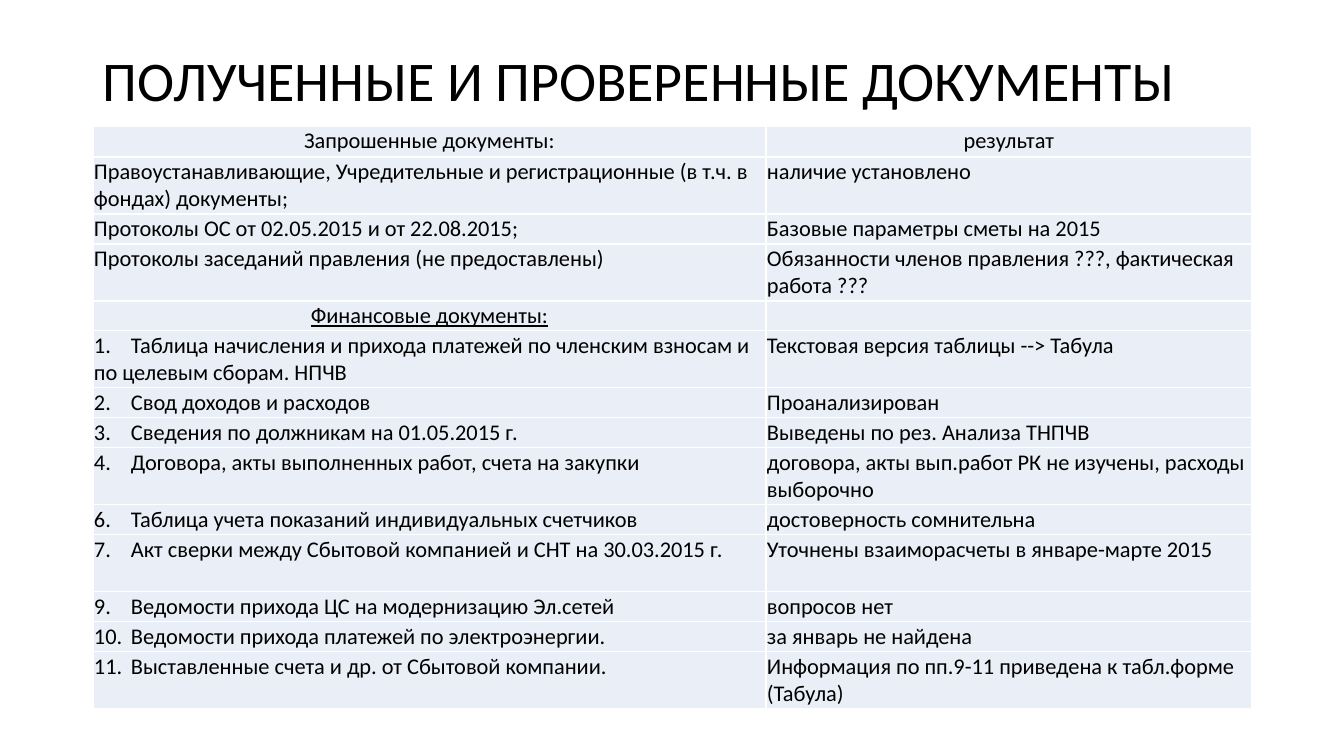
from lxml.etree import SubElement
from pptx import Presentation
from pptx.dml.color import RGBColor
from pptx.enum.text import MSO_ANCHOR, PP_ALIGN
from pptx.oxml.ns import qn
from pptx.util import Pt

TITLE = "ПОЛУЧЕННЫЕ И ПРОВЕРЕННЫЕ ДОКУМЕНТЫ"
# Height kind, document, result; a tab follows each item number
ROWS = [
    ("header", "Запрошенные документы:", "результат"),
    ("double", "Правоустанавливающие, Учредительные и регистрационные (в т.ч. в фондах) документы;",
     "наличие установлено"),
    ("single", "Протоколы ОС от 02.05.2015 и от 22.08.2015;", "Базовые параметры сметы на 2015"),
    ("double", "Протоколы заседаний правления (не предоставлены)",
     "Обязанности членов правления ???, фактическая работа ???"),
    ("single", "Финансовые документы:", ""),
    ("double", "1.\tТаблица начисления и прихода платежей по членским взносам и по целевым сборам. НПЧВ",
     "Текстовая версия таблицы --> Табула"),
    ("single", "2.\tСвод доходов и расходов", "Проанализирован"),
    ("single", "3.\tСведения по должникам на 01.05.2015 г.", "Выведены по рез. Анализа ТНПЧВ"),
    ("double", "4.\tДоговора, акты выполненных работ, счета на закупки",
     "договора, акты вып.работ РК не изучены, расходы выборочно"),
    ("single", "6.\tТаблица учета показаний индивидуальных счетчиков", "достоверность сомнительна"),
    ("double", "7.\tАкт сверки между Cбытовой компанией и СНТ на 30.03.2015 г.",
     "Уточнены взаиморасчеты в январе-марте 2015"),
    ("single", "9.\tВедомости прихода ЦС на модернизацию Эл.сетей", "вопросов нет"),
    ("single", "10.\tВедомости прихода платежей по электроэнергии.", "за январь не найдена"),
    ("double", "11.\tВыставленные счета и др. от Cбытовой компании.",
     "Информация по пп.9-11 приведена к табл.форме (Табула)"),
]
HEADER_ROW, SECTION_ROW = 0, 4

FONT = "Calibri"
BLACK = RGBColor(0x00, 0x00, 0x00)
WHITE = RGBColor(0xFF, 0xFF, 0xFF)
PALE_BLUE = RGBColor(0xEA, 0xEF, 0xF7)

# Lengths in px
SLIDE_WIDTH, SLIDE_HEIGHT = 1344, 756
LEFT, TITLE_TOP, TITLE_HEIGHT, TABLE_TOP = 93, 40, 86, 126
COLUMNS = [673, 486]
ROW_HEIGHTS = {"header": 31, "single": 30, "double": 57}
INSET, NUMBER_TAB = 1, 37


def px(length):
    return round(length * 914400 / 100.8)


def style_span(span, size):
    span.font.name = FONT
    span.font.size = Pt(size)
    span.font.color.rgb = BLACK


def add_borders(cell):
    properties = cell._tc.get_or_add_tcPr()
    for index, side in enumerate(("a:lnL", "a:lnR", "a:lnT", "a:lnB")):
        line = properties.makeelement(qn(side), {"w": str(Pt(1))})
        fill = SubElement(line, qn("a:solidFill"))
        SubElement(fill, qn("a:srgbClr"), val=str(WHITE))
        properties.insert(index, line)


def fill_cell(cell, text, centred, underlined):
    cell.margin_left = cell.margin_right = cell.margin_top = px(INSET)
    cell.margin_bottom = 0
    cell.fill.solid()
    cell.fill.fore_color.rgb = PALE_BLUE
    add_borders(cell)
    para = cell.text_frame.paragraphs[0]
    if not text:
        SubElement(para._p, qn("a:endParaRPr"), sz="1600")
        return
    para.text = text
    para.alignment = PP_ALIGN.CENTER if centred else PP_ALIGN.LEFT
    if "\t" in text:
        tabs = SubElement(para._p.get_or_add_pPr(), qn("a:tabLst"))
        SubElement(tabs, qn("a:tab"), pos=str(px(NUMBER_TAB)), algn="l")
    for span in para.runs:
        style_span(span, 16)
        span.font.underline = underlined


def main():
    deck = Presentation()
    deck.slide_width, deck.slide_height = px(SLIDE_WIDTH), px(SLIDE_HEIGHT)
    page = deck.slides.add_slide(deck.slide_layouts[6])
    width = sum(COLUMNS)

    # Title
    box = page.shapes.add_textbox(px(LEFT), px(TITLE_TOP), px(width), px(TITLE_HEIGHT))
    frame = box.text_frame
    frame.word_wrap = True
    frame.vertical_anchor = MSO_ANCHOR.MIDDLE
    frame.text = TITLE
    frame.paragraphs[0].line_spacing = 0.9
    style_span(frame.paragraphs[0].runs[0], 40)

    # Table of documents
    heights = [ROW_HEIGHTS[kind] for kind, *_ in ROWS]
    table = page.shapes.add_table(len(ROWS), len(COLUMNS), px(LEFT), px(TABLE_TOP),
                                  px(width), px(sum(heights))).table
    table.first_row = table.horz_banding = False
    for column, column_width in zip(table.columns, COLUMNS):
        column.width = px(column_width)
    for number, (_, *texts) in enumerate(ROWS):
        table.rows[number].height = px(heights[number])
        for place, text in enumerate(texts):
            fill_cell(table.cell(number, place), text,
                      centred=number in (HEADER_ROW, SECTION_ROW),
                      underlined=number == SECTION_ROW)

    deck.save("out.pptx")


if __name__ == "__main__":
    main()
